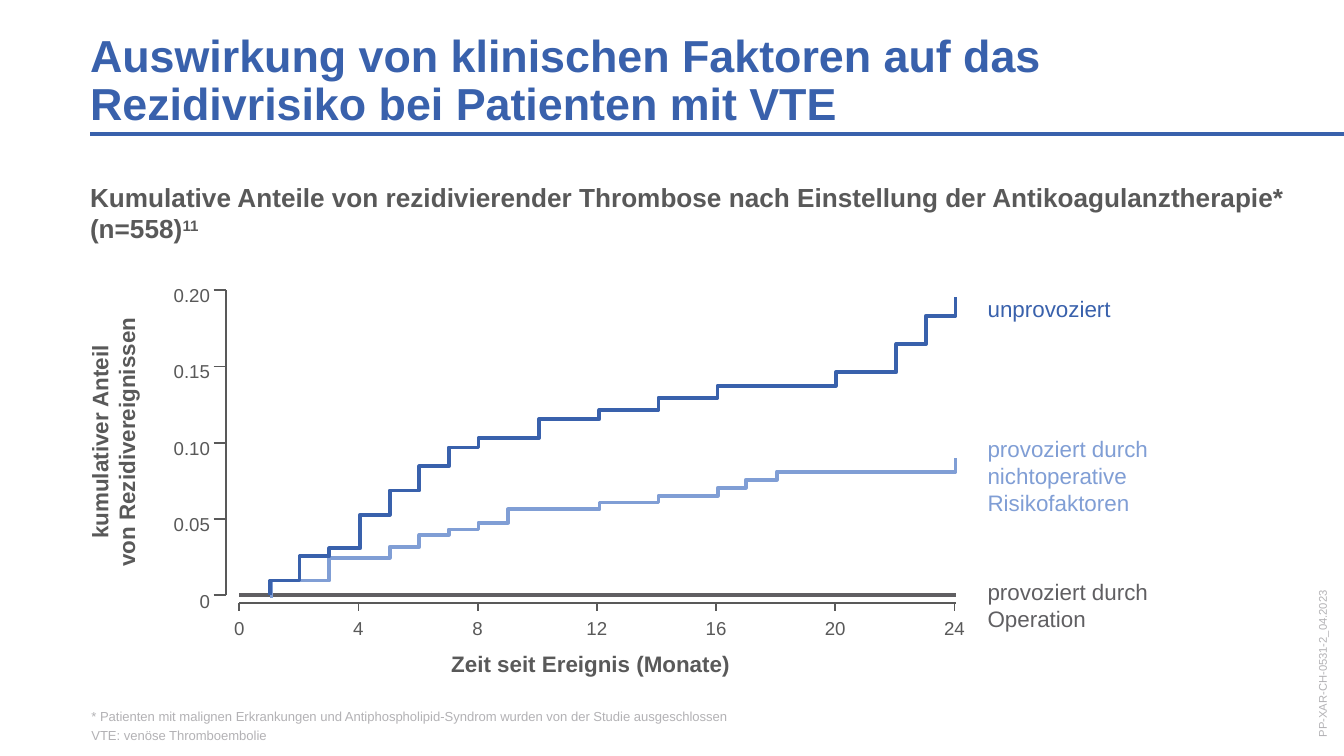
from lxml import etree
from pptx import Presentation
from pptx.dml.color import RGBColor
from pptx.enum.shapes import MSO_CONNECTOR
from pptx.enum.text import MSO_ANCHOR, MSO_AUTO_SIZE, PP_ALIGN
from pptx.oxml.ns import qn
from pptx.util import Inches, Pt

BLUE, LIGHT_BLUE = "3961AC", "809ED5"
GREY, DARK_GREY, PALE_GREY = "595959", "605F62", "B3B2B5"

# Plot area
X0, X_END, X_STEP = 1.78, 7.11, 0.887
Y_TOP, Y_ZERO, Y_AXIS = 2.16, 4.43, 4.49
Y_LABELS = ["0.20", "0.15", "0.10", "0.05", "0"]
X_LABELS = ["0", "4", "8", "12", "16", "20", "24"]

# Each pair is the place of a step and the level it rises to
UNPROVOKED = [(2.01, 4.32), (2.23, 4.14), (2.45, 4.08), (2.68, 3.83),
              (2.9, 3.65), (3.12, 3.47), (3.34, 3.33), (3.56, 3.26),
              (4.01, 3.12), (4.46, 3.05), (4.9, 2.96), (5.34, 2.87),
              (6.22, 2.77), (6.67, 2.56), (6.89, 2.35), (7.11, 2.21)]
NON_SURGICAL = [(2.02, 4.32), (2.45, 4.15), (2.9, 4.07), (3.12, 3.98),
                (3.34, 3.94), (3.56, 3.89), (3.78, 3.79), (4.46, 3.74),
                (4.9, 3.69), (5.34, 3.63), (5.55, 3.57), (5.78, 3.51),
                (7.11, 3.41)]


def rgb(color):
    return RGBColor.from_string(color)


def style_run(r, size, color, bold):
    r.font.name = "Arial"
    r.font.size = Pt(size)
    r.font.bold = bold
    r.font.color.rgb = rgb(color)


def add_text(s, box, lines, size, color, bold=False, align=PP_ALIGN.LEFT,
             anchor=MSO_ANCHOR.TOP, inset=True, wrap=True, grow=True,
             rotation=0):
    """Add a text box; a newline inside a line is a soft break."""
    sp = s.shapes.add_textbox(*map(Inches, box))
    sp.rotation = rotation
    tf = sp.text_frame
    tf.word_wrap = wrap
    tf.vertical_anchor = anchor
    if grow:
        tf.auto_size = MSO_AUTO_SIZE.SHAPE_TO_FIT_TEXT
    if not inset:
        tf.margin_left = tf.margin_right = tf.margin_top = tf.margin_bottom = 0
    for i, line in enumerate(lines):
        p = tf.add_paragraph() if i else tf.paragraphs[0]
        p.text = line
        p.alignment = align
        for r in p.runs:
            style_run(r, size, color, bold)
    return tf


def add_line(s, x1, y1, x2, y2, color=GREY, width=1):
    line = s.shapes.add_connector(MSO_CONNECTOR.STRAIGHT,
                                  *map(Inches, (x1, y1, x2, y2)))
    line.line.color.rgb = rgb(color)
    line.line.width = Pt(width)
    etree.SubElement(line._element.spPr, qn("a:effectLst"))


def add_step_curve(s, steps, color, start_y):
    points, y = [], start_y
    for x, level in steps:
        points += [(Inches(x), Inches(y)), (Inches(x), Inches(level))]
        y = level
    builder = s.shapes.build_freeform(*points[0])
    builder.add_line_segments(points[1:], close=False)
    sp = builder.convert_to_shape()
    sp.shadow.inherit = False
    sp.fill.background()
    sp.line.color.rgb = rgb(color)
    sp.line.width = Pt(2)


def add_axes(s):
    add_line(s, X0, Y_AXIS, X_END, Y_AXIS)
    add_line(s, 1.68, Y_TOP, 1.68, Y_ZERO)
    gap = (Y_ZERO - Y_TOP) / (len(Y_LABELS) - 1)
    for i, label in enumerate(Y_LABELS):
        y = Y_TOP + i * gap
        add_line(s, 1.59, y, 1.68, y)
        add_text(s, (0.81, 2.06 + i * 0.57, 0.85, 0.27), [label], 10, GREY,
                 align=PP_ALIGN.RIGHT)
    for i, label in enumerate(X_LABELS):
        x = X0 + i * X_STEP
        add_line(s, x, Y_AXIS, x, Y_AXIS + 0.06)
        add_text(s, (x - 0.35, 4.54, 0.7, 0.27), [label], 10, GREY,
                 align=PP_ALIGN.CENTER)
    # Axis titles
    add_text(s, (-0.3, 3.04, 2.28, 0.5),
             ["kumulativer Anteil\nvon Rezidivereignissen"], 12, GREY,
             bold=True, align=PP_ALIGN.CENTER, rotation=270)
    add_text(s, (1.68, 4.79, 5.43, 0.3), ["Zeit seit Ereignis (Monate)"], 12,
             GREY, bold=True, align=PP_ALIGN.CENTER)


def main():
    prs = Presentation()
    prs.slide_width = Inches(10)
    prs.slide_height = Inches(10 * 9 / 16)
    s = prs.slides.add_slide(prs.slide_layouts[6])

    # Document code and title rule
    add_text(s, (9.14, 4.63, 1.4, 0.31), ["PP-XAR-CH-0531-2_04.2023"], 6,
             PALE_GREY, anchor=MSO_ANCHOR.MIDDLE, inset=False, wrap=False,
             grow=False, rotation=270)
    add_line(s, 0.67, 1, 10, 1, BLUE, 2.25)

    # Footnotes, subtitle and title
    tf = add_text(s, (0.68, 5.27, 8.65, 0.26),
                  ["* Patienten mit malignen Erkrankungen und "
                   "Antiphospholipid-Syndrom wurden von der Studie "
                   "ausgeschlossen", "VTE: venöse Thromboembolie"], 7,
                  PALE_GREY, anchor=MSO_ANCHOR.BOTTOM, inset=False)
    for p in tf.paragraphs:
        p.space_after = Pt(2)
    tf = add_text(s, (0.67, 1.35, 9.05, 0.47),
                  ["Kumulative Anteile von rezidivierender Thrombose nach "
                   "Einstellung der Antikoagulanztherapie* (n=558)"], 14, GREY,
                  bold=True, inset=False)
    r = tf.paragraphs[0].add_run()
    r.text = "11"
    style_run(r, 14, GREY, True)
    r.font._element.set("baseline", "30000")
    tf = add_text(s, (0.67, 0.24, 9.06, 0.73),
                  ["Auswirkung von klinischen Faktoren auf das Rezidivrisiko "
                   "bei Patienten mit VTE"], 24, BLUE, bold=True,
                  anchor=MSO_ANCHOR.BOTTOM, inset=False)
    tf.paragraphs[0].line_spacing = 0.9

    # Curve labels
    for y, width, height, wrap, label, color in [
            (4.25, 1.4, 0.5, False, "provoziert durch\nOperation", DARK_GREY),
            (3.19, 2.9, 0.71, True,
             "provoziert durch\nnichtoperative\nRisikofaktoren", LIGHT_BLUE),
            (2.15, 1.12, 0.3, False, "unprovoziert", BLUE)]:
        add_text(s, (7.25, y, width, height), [label], 12, color, wrap=wrap)

    # Axes and curves
    add_axes(s)
    add_line(s, X0, Y_ZERO, X_END, Y_ZERO, DARK_GREY, 2)
    add_step_curve(s, NON_SURGICAL, LIGHT_BLUE, 4.45)
    add_step_curve(s, UNPROVOKED, BLUE, Y_ZERO)

    prs.save("out.pptx")


if __name__ == "__main__":
    main()
